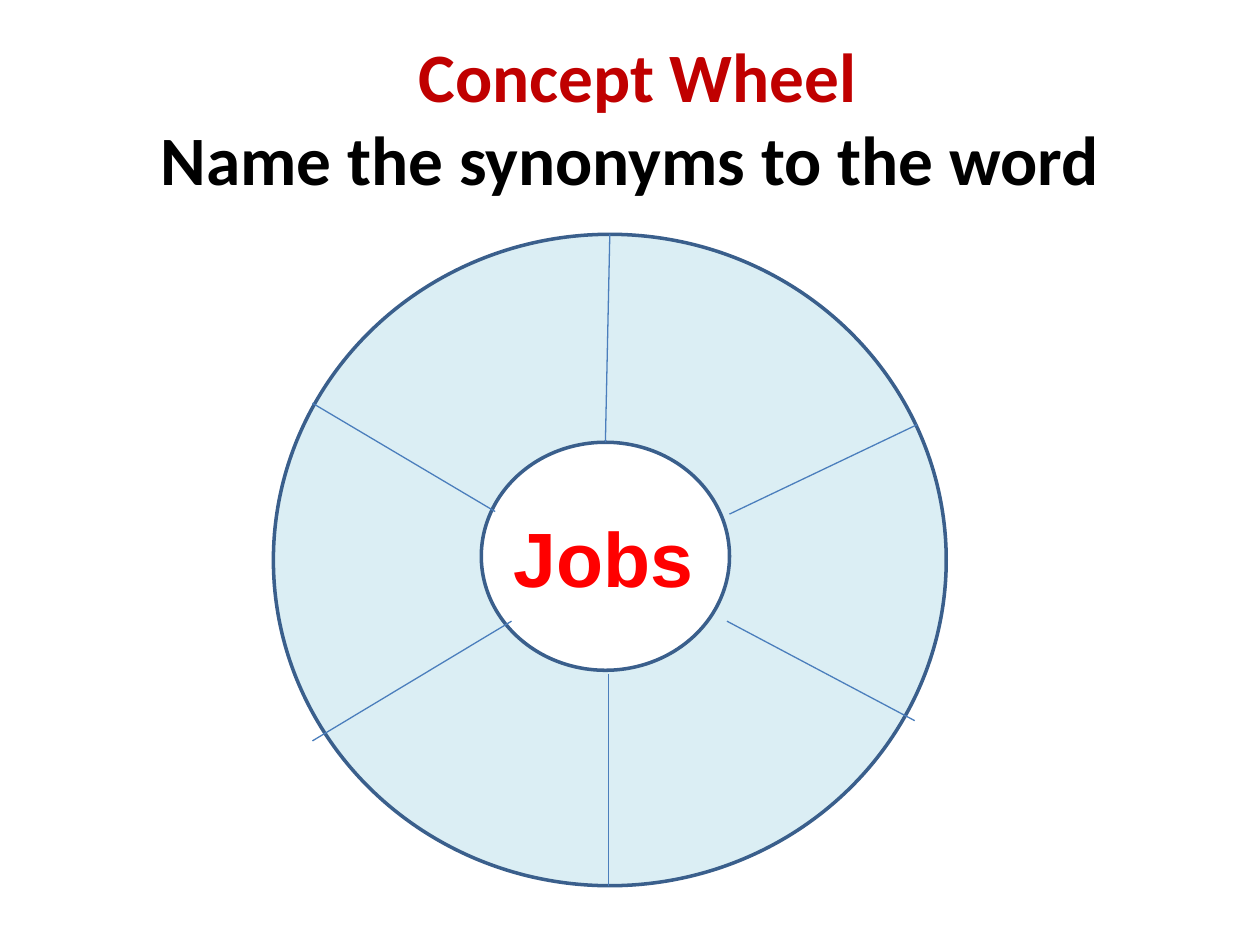
import pptx
import pptx.dml.color
import pptx.enum.shapes
import pptx.enum.text
import pptx.oxml
import pptx.util

Inches = pptx.util.Inches
Pt = pptx.util.Pt


def colour(value):
    return pptx.dml.color.RGBColor.from_string(value)


class WheelSlide:
    rim = "3A5F8C"
    spoke_line = "4B7EBC"

    def __init__(self, presentation):
        self.slide = presentation.slides.add_slide(presentation.slide_layouts[6])

    def ellipse(self, left, top, width, height, fill):
        shape = self.slide.shapes.add_shape(
            pptx.enum.shapes.MSO_SHAPE.OVAL,
            Inches(left), Inches(top), Inches(width), Inches(height))
        shape.shadow.inherit = False
        shape.fill.solid()
        shape.fill.fore_color.rgb = colour(fill)
        shape.line.color.rgb = colour(self.rim)
        shape.line.width = Pt(2)
        return shape

    def spoke(self, start, end):
        connector = self.slide.shapes.add_connector(
            pptx.enum.shapes.MSO_CONNECTOR.STRAIGHT,
            *(Inches(value) for value in start + end))
        connector.line.color.rgb = colour(self.spoke_line)
        connector.line.width = Pt(0.75)
        properties = connector._element.spPr
        properties.append(properties.makeelement(pptx.oxml.ns.qn("a:effectLst"), {}))
        return connector

    def text(self, left, top, width, height, lines, font, size, alignment, anchor):
        box = self.slide.shapes.add_textbox(
            Inches(left), Inches(top), Inches(width), Inches(height))
        frame = box.text_frame
        frame.word_wrap = True
        frame.vertical_anchor = anchor
        paragraph = frame.paragraphs[0]
        paragraph.alignment = alignment
        for number, runs in enumerate(lines):
            if number:
                paragraph.add_line_break()
            for words, shade, bold in runs:
                run = paragraph.add_run()
                run.text = words
                run.font.name = font
                run.font.size = Pt(size)
                run.font.bold = bold
                run.font.color.rgb = colour(shade)
        return box


def main():
    presentation = pptx.Presentation()
    presentation.slide_width = Inches(10)
    presentation.slide_height = Inches(7.5)
    wheel = WheelSlide(presentation)
    align = pptx.enum.text.PP_ALIGN
    anchor = pptx.enum.text.MSO_ANCHOR

    title = [
        [(" ", "000000", False), ("Concept Wheel", "C00000", True)],
        [("Name the synonyms to the word", "000000", True)],
    ]
    wheel.text(0.5, 0.3, 9, 1.25, title, "Calibri", 39.6, align.CENTER, anchor.MIDDLE)

    outer = wheel.ellipse(2.17, 1.86, 5.34, 5.17, "DBEEF4")
    hub = wheel.ellipse(3.82, 3.51, 1.97, 1.81, "FFFFFF")

    top_spoke = wheel.spoke((4.83, 1.86), (4.8, 3.51))
    top_spoke.begin_connect(outer, 0)
    top_spoke.end_connect(hub, 0)
    spokes = [
        ((4.83, 5.35), (4.83, 7.03)),
        ((3.93, 4.06), (2.48, 3.2)),
        ((4.06, 4.93), (2.48, 5.88)),
        ((5.79, 4.08), (7.28, 3.37)),
        ((5.77, 4.93), (7.26, 5.72)),
    ]
    for start, end in spokes:
        wheel.spoke(start, end)

    concept = [[("Jobs", "FF0000", True)]]
    wheel.text(3.98, 4, 1.7, 0.84, concept, "Arial", 44, align.LEFT, anchor.TOP)

    presentation.save("out.pptx")


if __name__ == "__main__":
    main()
